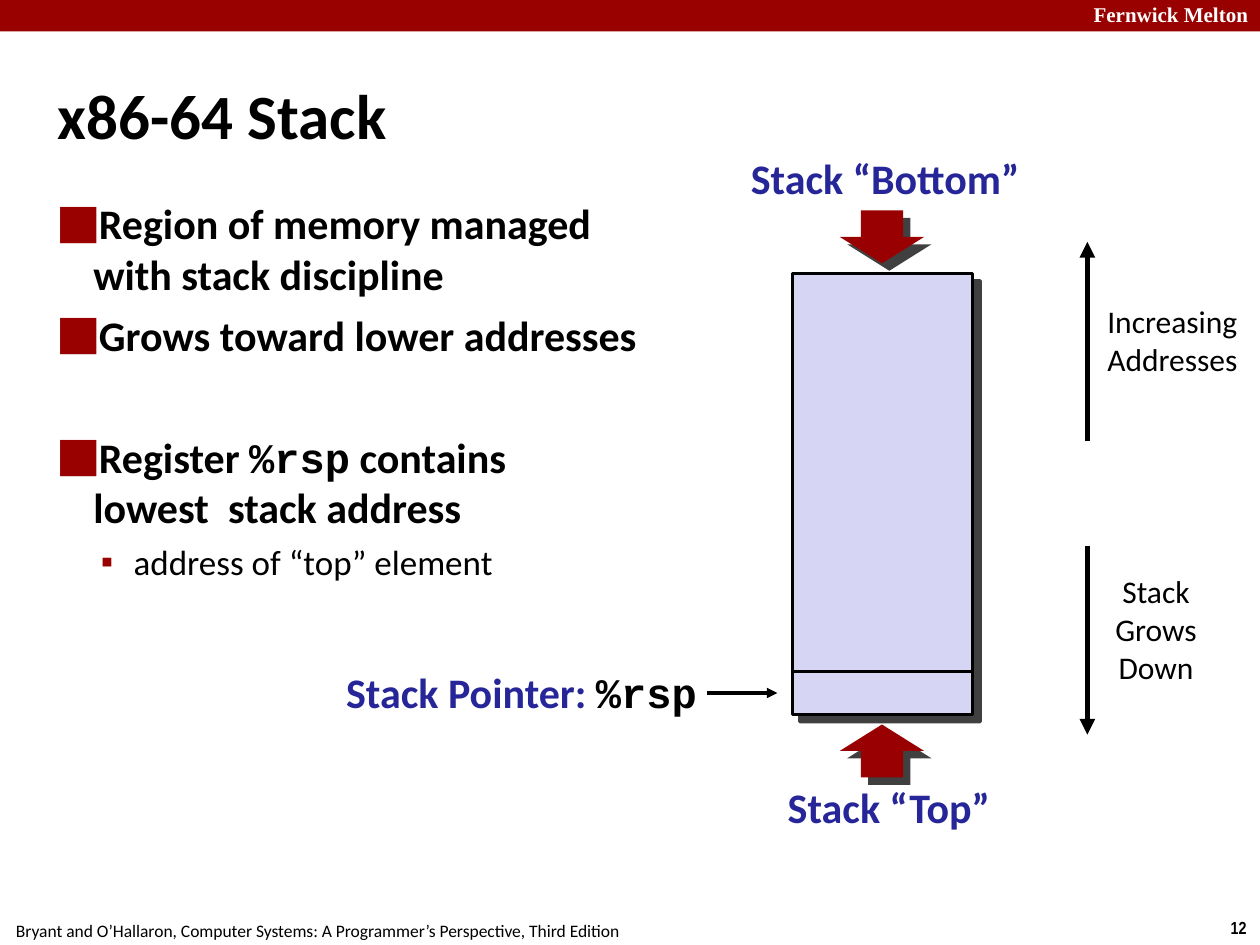
from copy import deepcopy
from dataclasses import dataclass

from lxml.etree import SubElement
from pptx import Presentation
from pptx.dml.color import RGBColor
from pptx.enum.shapes import MSO_CONNECTOR, MSO_SHAPE
from pptx.enum.text import MSO_ANCHOR, MSO_AUTO_SIZE, PP_ALIGN
from pptx.oxml.ns import qn
from pptx.util import Inches, Pt


@dataclass(frozen=True)
class Theme:
    red: str = "990000"
    arrow: str = "980002"
    blue: str = "262699"
    lilac: str = "D6D6F4"
    black: str = "000000"
    white: str = "FFFFFF"
    sans: str = "Calibri"
    mono: str = "Courier New"
    serif: str = "Times New Roman"
    narrow: str = "Arial Narrow"
    title: int = 36
    heading: int = 24
    detail: int = 20
    label: int = 18
    brand: int = 12
    small: int = 10


T = Theme()


def style(r, size, color=T.black, bold=False, font=T.sans):
    r.font.size, r.font.bold, r.font.name = Pt(size), bold, font
    r.font.color.rgb = RGBColor.from_string(color)


def set_frame(tf, inset=(0.04, 0.04), anchor=MSO_ANCHOR.TOP, wrap=True):
    tf.word_wrap, tf.auto_size, tf.vertical_anchor = wrap, MSO_AUTO_SIZE.NONE, anchor
    tf.margin_left = tf.margin_right = Inches(inset[0])
    tf.margin_top = tf.margin_bottom = Inches(inset[1])


def place(sp, x, y, w, h):
    sp.left, sp.top, sp.width, sp.height = map(Inches, (x, y, w, h))


def add_label(s, box, text, size, color=T.black, bold=False, font=T.sans,
              align=PP_ALIGN.CENTER, inset=(0.04, 0.04), wrap=True):
    sp = s.shapes.add_textbox(*map(Inches, box))
    tf = sp.text_frame
    set_frame(tf, inset, wrap=wrap)
    tf.text = text
    for p in tf.paragraphs:
        p.alignment = align
        for r in p.runs:
            style(r, size, color, bold, font)
    return sp


def add_block(s, kind, box, fill, shadow=False):
    sp = s.shapes.add_shape(kind, *map(Inches, box))
    sp.shadow.inherit = False
    sp.fill.solid()
    sp.fill.fore_color.rgb = RGBColor.from_string(fill)
    sp.line.fill.background()
    if shadow:
        effects = sp._element.spPr.find(qn("a:effectLst"))
        outer = SubElement(effects, qn("a:outerShdw"), dist=str(Pt(6)),
                           dir=str(45 * 60000), algn="ctr", rotWithShape="0")
        color = SubElement(outer, qn("a:srgbClr"), val=T.black)
        SubElement(color, qn("a:alpha"), val="75000")
    return sp


def add_line(s, start, end, width, arrow=True):
    line = s.shapes.add_connector(MSO_CONNECTOR.STRAIGHT, *map(Inches, start + end))
    line.line.width = Pt(width)
    line.line.color.rgb = RGBColor.from_string(T.black)
    if arrow:
        SubElement(line.line._get_or_add_ln(), qn("a:tailEnd"), type="triangle")
    SubElement(line._element.spPr, qn("a:effectLst"))


def add_header(s, x, y, w, h):
    add_block(s, MSO_SHAPE.RECTANGLE, (x, y, w, h), T.red)
    add_label(s, (x + w - 1.36, y - 0.03, 1.44, 0.28), "Fernwick Melton",
              T.brand, T.white, True, T.serif, PP_ALIGN.LEFT)


def add_footer(s, x, y, w, h):
    inset = (0.1, 0.05)
    add_label(s, (x - 0.02, y + 0.02, 5.08, h),
              "Bryant and O’Hallaron, Computer Systems: A Programmer’s Perspective, Third Edition",
              T.small, inset=inset, wrap=False)
    add_label(s, (x + w - 0.34, y, 0.34, h), "12", T.small, bold=True,
              font=T.narrow, inset=inset, wrap=False)


def add_title(s, x, y, w, h):
    title = s.shapes.title
    place(title, x, y, w, h)
    tf = title.text_frame
    set_frame(tf, anchor=MSO_ANCHOR.MIDDLE)
    tf.text = "x86-64 Stack"
    tf.paragraphs[0].alignment = PP_ALIGN.LEFT
    style(tf.paragraphs[0].runs[0], T.title, bold=True)


def set_bullet(p, char, margin, indent):
    pPr = p._p.get_or_add_pPr()
    pPr.set("marL", str(Inches(margin)))
    pPr.set("indent", str(Inches(-indent)))
    SubElement(SubElement(pPr, qn("a:buClr")), qn("a:srgbClr"), val=T.red)
    SubElement(pPr, qn("a:buChar"), char=char)


def add_bullets(s, x, y, w, h):
    body = s.placeholders[1]
    place(body, x, y, w, h)
    tf = body.text_frame
    set_frame(tf)
    items = [
        (0, 0, "Region of memory managed with stack discipline"),
        (0, 6, "Grows toward lower addresses"),
        (0, 41, "Register |%rsp| contains \vlowest  stack address"),
        (1, 5, "address of “top” element"),
    ]
    for i, (level, before, text) in enumerate(items):
        p = tf.paragraphs[0] if i == 0 else tf.add_paragraph()
        p.level, p.space_before = level, Pt(before)
        set_bullet(p, *(("⬛", 0.28, 0.28), ("▪", 0.6, 0.26))[level])
        for part in text.split("|"):
            for n, piece in enumerate(part.split("\v")):
                if n:
                    p.add_line_break()
                r = p.add_run()
                r.text = piece
                style(r, T.detail if level else T.heading, bold=level == 0,
                      font=T.mono if piece.startswith("%") else T.sans)
        for br in p._p.findall(qn("a:br")):
            br.append(deepcopy(p.runs[0]._r.rPr))


def add_stack(s, x, y, w, h):
    bottom, mid = y + h, x + w / 2
    block = add_block(s, MSO_SHAPE.RECTANGLE, (x, y, w, h), T.lilac, shadow=True)
    block.line.width = Pt(2)
    block.line.color.rgb = RGBColor.from_string(T.black)
    add_line(s, (x, bottom - 0.34), (x + w, bottom - 0.34), 2, arrow=False)

    ends = [
        (MSO_SHAPE.DOWN_ARROW, y - 0.5, "Stack “Bottom”", 5.89, y - 1, 2.27),
        (MSO_SHAPE.UP_ARROW, bottom + 0.08, "Stack “Top”", 6.16, bottom + 0.49, 1.79),
    ]
    for kind, top, text, left, label_top, width in ends:
        add_block(s, kind, (mid - 0.34, top, 0.67, 0.42), T.arrow, shadow=True)
        add_label(s, (x + left - 6.29, label_top, width, 0.49), text,
                  T.heading, T.blue, True)

    pointer_y = bottom - 0.17
    add_line(s, (x - 0.68, pointer_y), (x - 0.12, pointer_y), 2)
    label = add_label(s, (x - 3.6, pointer_y - 0.25, 2.88, 0.5), "Stack Pointer: ",
                      T.heading, T.blue, True, align=PP_ALIGN.RIGHT)
    r = label.text_frame.paragraphs[0].add_run()
    r.text = "%rsp"
    style(r, T.heading, bold=True, font=T.mono)


def add_directions(s, x, y, w, h):
    add_line(s, (x, y + 1.58), (x, y), 3)
    add_label(s, (x + 0.11, y + 0.44, w - 0.11, 0.69), "Increasing\nAddresses", T.label)
    add_line(s, (x, y + h - 1.5), (x, y + h), 3)
    add_label(s, (x + 0.1, y + h - 1.33, 0.89, 1), "Stack Grows\nDown", T.label)


def main():
    prs = Presentation()
    prs.slide_width, prs.slide_height = Inches(10), Inches(7.5)
    s = prs.slides.add_slide(prs.slide_layouts[1])
    add_footer(s, 0, 7.23, 10, 0.27)
    add_header(s, 0, 0, 10, 0.25)
    add_title(s, 0.42, 0.28, 9.17, 1.25)
    add_bullets(s, 0.42, 1.53, 4.88, 5.94)
    add_stack(s, 6.29, 2.17, 1.43, 3.5)
    add_directions(s, 8.63, 1.92, 1.24, 3.91)
    prs.save("out.pptx")


if __name__ == "__main__":
    main()
